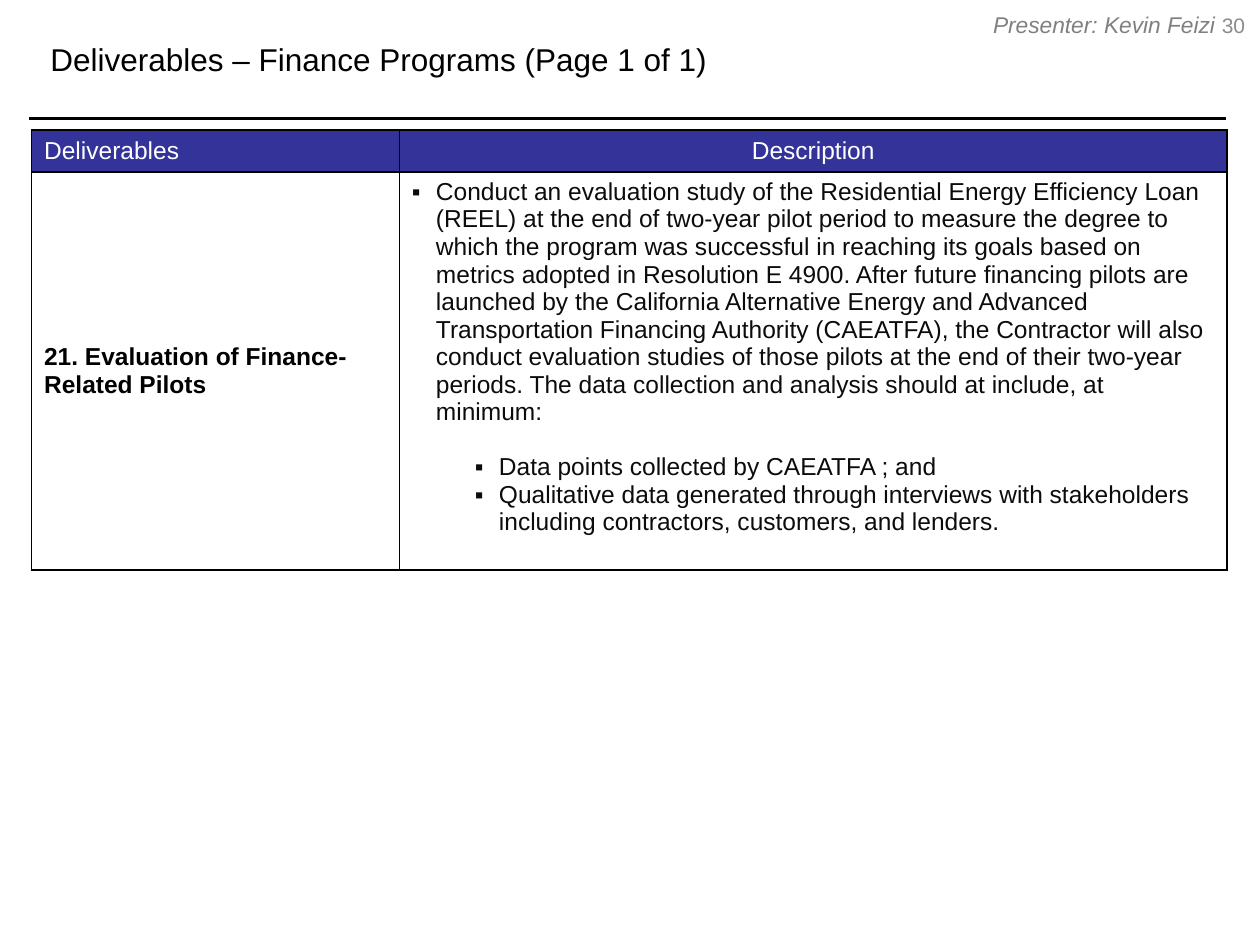
import pptx
import pptx.dml.color
import pptx.enum.shapes
import pptx.enum.text
import pptx.oxml
import pptx.oxml.ns
import pptx.util
from lxml import etree

ALIGN = pptx.enum.text.PP_ALIGN
ANCHOR = pptx.enum.text.MSO_ANCHOR
COLORS = {"black": "000000", "body": "0C0C0C", "header": "333399",
          "white": "FFFFFF", "presenter": "808080", "number": "8C8C8C"}
INCH = pptx.util.Inches(1)
LEFT, RULE_TOP = 0.23, 0.94
COLUMNS, ROWS = (2.92, 6.57), (0.32, 3.16)


def color(name):
    return pptx.dml.color.RGBColor.from_string(COLORS[name])


def style(paragraph, size, color_name, align=ALIGN.LEFT, bold=False, italic=False):
    paragraph.alignment = align
    for run in paragraph.runs:
        run.font.name = "Arial"
        run.font.size = pptx.util.Pt(size)
        run.font.color.rgb = color(color_name)
        run.font.bold = bold
        run.font.italic = italic


presentation = pptx.Presentation()
presentation.slide_width = 10 * INCH
presentation.slide_height = int(7.5 * INCH)
slide = presentation.slides.add_slide(presentation.slide_layouts[6])

# Title, page number and presenter: text, box, left margin, size, colour, alignment, italic
for text, box, margin, size, color_name, align, italic in (
    ("Deliverables – Finance Programs (Page 1 of 1)",
     (LEFT, 0, 9.45, RULE_TOP), 0.17, 18, "black", ALIGN.LEFT, False),
    ("30", (9.58, 0, 0.42, 0.4), 0.1, 12, "number", ALIGN.CENTER, False),
    ("Presenter: Kevin Feizi", (7, 0.07, 2.74, 0.24), 0.1, 13, "presenter", ALIGN.RIGHT, True),
):
    shape = slide.shapes.add_textbox(*(int(length * INCH) for length in box))
    frame = shape.text_frame
    frame.word_wrap = True
    frame.vertical_anchor = ANCHOR.MIDDLE
    frame.margin_left = int(margin * INCH)
    frame.text = text
    style(frame.paragraphs[0], size, color_name, align, italic=italic)

rule = slide.shapes.add_connector(
    pptx.enum.shapes.MSO_CONNECTOR.STRAIGHT,
    int(LEFT * INCH), int(RULE_TOP * INCH), int(9.73 * INCH), int(RULE_TOP * INCH))
rule.line.color.rgb = color("black")
rule.line.width = pptx.util.Pt(2)
etree.SubElement(rule._element.spPr, pptx.oxml.ns.qn("a:effectLst"))

# Deliverables table
table = slide.shapes.add_table(
    len(ROWS), len(COLUMNS), int(0.25 * INCH), int(1.03 * INCH),
    int(sum(COLUMNS) * INCH), int(sum(ROWS) * INCH)).table
table.horz_banding = False
for column, width in zip(table.columns, COLUMNS):
    column.width = int(width * INCH)
for row, height in zip(table.rows, ROWS):
    row.height = int(height * INCH)

cell_texts = (
    ("Deliverables", "Description"),
    ("21. Evaluation of Finance-Related Pilots", "\n".join((
        "Conduct an evaluation study of the Residential Energy Efficiency Loan (REEL) at the end of "
        "two-year pilot period to measure the degree to which the program was successful in reaching "
        "its goals based on metrics adopted in Resolution E 4900. After future financing pilots are "
        "launched by the California Alternative Energy and Advanced Transportation Financing Authority "
        "(CAEATFA), the Contractor will also conduct evaluation studies of those pilots at the end of "
        "their two-year periods. The data collection and analysis should at include, at minimum:",
        "Data points collected by CAEATFA ; and",
        "Qualitative data generated through interviews with stakeholders including contractors, "
        "customers, and lenders."))),
)
for row_index, row_texts in enumerate(cell_texts):
    for column_index, text in enumerate(row_texts):
        cell = table.cell(row_index, column_index)
        is_header = row_index == 0
        is_description = not is_header and column_index == 1
        cell.text_frame.text = text
        cell.vertical_anchor = ANCHOR.TOP if is_description else ANCHOR.MIDDLE
        cell.fill.solid()
        cell.fill.fore_color.rgb = color("header" if is_header else "white")
        properties = cell._tc.get_or_add_tcPr()
        for position, side in enumerate(("lnL", "lnR", "lnT", "lnB")):
            properties.insert(position, pptx.oxml.parse_xml(
                f'<a:{side} {pptx.oxml.ns.nsdecls("a")} w="12700"><a:solidFill>'
                f'<a:srgbClr val="{COLORS["black"]}"/></a:solidFill></a:{side}>'))
        text_color = "white" if is_header else "body" if is_description else "black"
        align = ALIGN.CENTER if is_header and column_index == 1 else ALIGN.LEFT
        for paragraph in cell.text_frame.paragraphs:
            style(paragraph, 14, text_color, align, bold=not is_header and not is_description)

# Bullets of the description, the last two one level in
description = table.cell(1, 1).text_frame.paragraphs
for paragraph, level in zip(description, (0, 1, 1)):
    paragraph.level = level
    properties = paragraph._p.get_or_add_pPr()
    properties.set("marL", str(int((0.19 + 0.5 * level) * INCH)))
    properties.set("indent", str(int(-0.19 * INCH)))
    etree.SubElement(properties, pptx.oxml.ns.qn("a:buFont")).set("typeface", "Arial")
    etree.SubElement(properties, pptx.oxml.ns.qn("a:buChar")).set("char", "▪")
description[1].space_before = pptx.util.Pt(15.75)

presentation.save("out.pptx")
